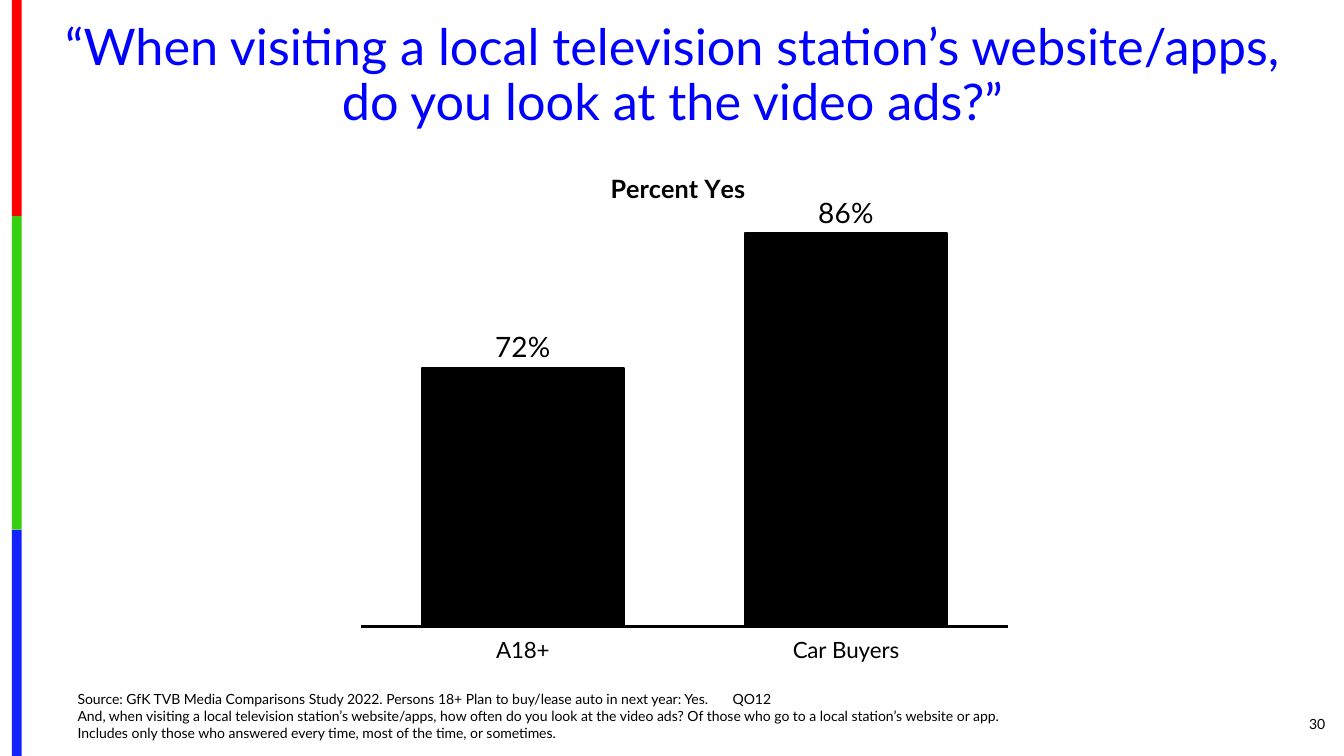
from dataclasses import dataclass

from lxml.etree import SubElement
from pptx import Presentation
from pptx.chart.data import CategoryChartData
from pptx.dml.color import RGBColor
from pptx.enum.chart import XL_CHART_TYPE as ChartType
from pptx.enum.chart import XL_LABEL_POSITION as LabelPosition
from pptx.enum.chart import XL_TICK_LABEL_POSITION as TickLabels
from pptx.enum.chart import XL_TICK_MARK as TickMark
from pptx.enum.shapes import MSO_SHAPE as Shape
from pptx.enum.text import MSO_ANCHOR as Anchor
from pptx.enum.text import MSO_AUTO_SIZE as AutoSize
from pptx.enum.text import PP_ALIGN as Align
from pptx.oxml import parse_xml
from pptx.oxml.ns import nsdecls, qn
from pptx.util import Cm, Pt


@dataclass(frozen=True)
class Theme:
    font: str = "Lato"
    ink: str = "000000"
    title: str = "0000FF"
    stripes: tuple = ("FE0000", "36CF12", "1322FE")
    title_size: int = 36
    value_size: int = 20
    heading_size: int = 18
    axis_size: int = 16
    note_size: int = 10
    line_width: float = 1.5


class SlideBuilder:
    def __init__(self, slide, theme):
        self.slide = slide
        self.theme = theme

    def style(self, font, size, color=None, bold=False):
        font.name = self.theme.font
        font.size = Pt(size)
        font.bold = bold
        font.color.rgb = RGBColor.from_string(color or self.theme.ink)

    def outline(self, line):
        line.color.rgb = RGBColor.from_string(self.theme.ink)
        line.width = Pt(self.theme.line_width)

    def place(self, shape, box, anchor):
        """Move a text shape to box (in cm) and return its first paragraph."""
        shape.left, shape.top, shape.width, shape.height = map(Cm, box)
        frame = shape.text_frame
        frame.word_wrap = True
        frame.auto_size = AutoSize.NONE
        frame.vertical_anchor = anchor
        return frame.paragraphs[0]

    def add_run(self, paragraph, text, size, color=None):
        run = paragraph.add_run()
        run.text = text
        self.style(run.font, size, color)

    def add_title(self, text, box):
        paragraph = self.place(self.slide.shapes.title, box, Anchor.TOP)
        paragraph.alignment = Align.CENTER
        paragraph.line_spacing = 0.9
        self.add_run(paragraph, text, self.theme.title_size, self.theme.title)

    def add_source(self, lines, box, tab):
        paragraph = self.place(self.slide.placeholders[1], box, Anchor.BOTTOM)
        paragraph.alignment = Align.LEFT
        paragraph.space_before = Pt(0)
        properties = paragraph._p.get_or_add_pPr()
        properties.set("marL", "0")
        properties.set("indent", "0")
        SubElement(properties, qn("a:buNone"))
        tabs = SubElement(properties, qn("a:tabLst"))
        SubElement(tabs, qn("a:tab"), pos=str(Cm(tab)), algn="l")
        self.style(paragraph.font, self.theme.note_size)
        for index, line in enumerate(lines):
            if index:
                paragraph.add_line_break()
            self.add_run(paragraph, line, self.theme.note_size)

    def add_page_number(self, text, box):
        text_box = self.slide.shapes.add_textbox(*map(Cm, box))
        paragraph = self.place(text_box, box, Anchor.MIDDLE)
        paragraph.alignment = Align.RIGHT
        self.add_run(paragraph, text, self.theme.note_size)

    def add_stripes(self, left, width, heights):
        """Stack coloured bars down the slide edge."""
        top = 0
        for color, height in zip(self.theme.stripes, heights):
            stripe = self.slide.shapes.add_shape(
                Shape.RECTANGLE, Cm(left), Cm(top), Cm(width), Cm(height))
            stripe.shadow.inherit = False
            stripe.fill.solid()
            stripe.fill.fore_color.rgb = RGBColor.from_string(color)
            stripe.line.fill.background()
            top += height

    def add_column_chart(self, heading, values, box):
        theme = self.theme
        data = CategoryChartData(number_format="0%")
        data.categories = list(values)
        data.add_series("Series 1", list(values.values()))
        chart = self.slide.shapes.add_chart(
            ChartType.COLUMN_CLUSTERED, *map(Cm, box), data).chart
        chart.has_legend = False
        self.style(chart.font, theme.note_size)

        chart.has_title = True
        run = chart.chart_title.text_frame.paragraphs[0].add_run()
        run.text = heading
        self.style(run.font, theme.heading_size, bold=True)
        self.set_layout(chart.chart_title.element, 1, x=0.39, y=0.05)
        plot_area = chart.element.find(".//" + qn("c:plotArea"))
        self.set_layout(plot_area, 0, x=0.047, y=0.167, w=0.906, h=0.681)

        value_axis = chart.value_axis
        value_axis.minimum_scale = 0.45
        value_axis.maximum_scale = 0.86
        value_axis.has_major_gridlines = False
        value_axis.visible = False
        category_axis = chart.category_axis
        category_axis.major_tick_mark = TickMark.NONE
        category_axis.tick_label_position = TickLabels.LOW
        self.style(category_axis.tick_labels.font, theme.axis_size)
        self.outline(category_axis.format.line)

        plot = chart.plots[0]
        plot.gap_width = 60
        plot.vary_by_categories = False
        series = plot.series[0]
        series.format.fill.solid()
        series.format.fill.fore_color.rgb = RGBColor.from_string(theme.ink)
        self.outline(series.format.line)
        labels = series.data_labels
        labels.show_value = True
        labels.number_format = "0%"
        labels.number_format_is_linked = False
        labels.position = LabelPosition.OUTSIDE_END
        self.style(labels.font, theme.value_size)

    @staticmethod
    def set_layout(parent, index, **fractions):
        """Fix a chart part at fractions of the chart's size."""
        for old in parent.findall(qn("c:layout")):
            parent.remove(old)
        layout = parse_xml(f"<c:layout {nsdecls('c')}><c:manualLayout/></c:layout>")
        manual = layout[0]
        if "w" in fractions:
            SubElement(manual, qn("c:layoutTarget"), val="inner")
        for name in ("x", "y"):
            SubElement(manual, qn(f"c:{name}Mode"), val="edge")
        for name, fraction in fractions.items():
            SubElement(manual, qn(f"c:{name}"), val=str(fraction))
        parent.insert(index, layout)


def main():
    presentation = Presentation()
    presentation.slide_width = Cm(33.87)
    presentation.slide_height = Cm(19.05)
    slide = presentation.slides.add_slide(presentation.slide_layouts[1])
    builder = SlideBuilder(slide, Theme())

    builder.add_stripes(0.3, 0.25, (5.45, 7.9, 5.7))
    builder.add_title(
        "“When visiting a local television station’s website/apps, "
        "do you look at the video ads?”", (1.17, 0.43, 31.55, 3.02))
    builder.add_page_number("30", (30.91, 17.73, 2.74, 1.02))
    builder.add_source((
        "Source: GfK TVB Media Comparisons Study 2022. Persons 18+ "
        "Plan to buy/lease auto in next year: Yes.\tQO12",
        "And, when visiting a local television station’s website/apps, how often do you "
        "look at the video ads? Of those who go to a local station’s website or app.",
        "Includes only those who answered every time, most of the time, or sometimes.",
    ), (1.7, 17.25, 23.93, 1.55), tab=22.25)
    builder.add_column_chart(
        "Percent Yes", {"A18+": 0.72, "Car Buyers": 0.86}, (8.26, 3.45, 17.98, 14.55))
    presentation.save("out.pptx")


if __name__ == "__main__":
    main()
